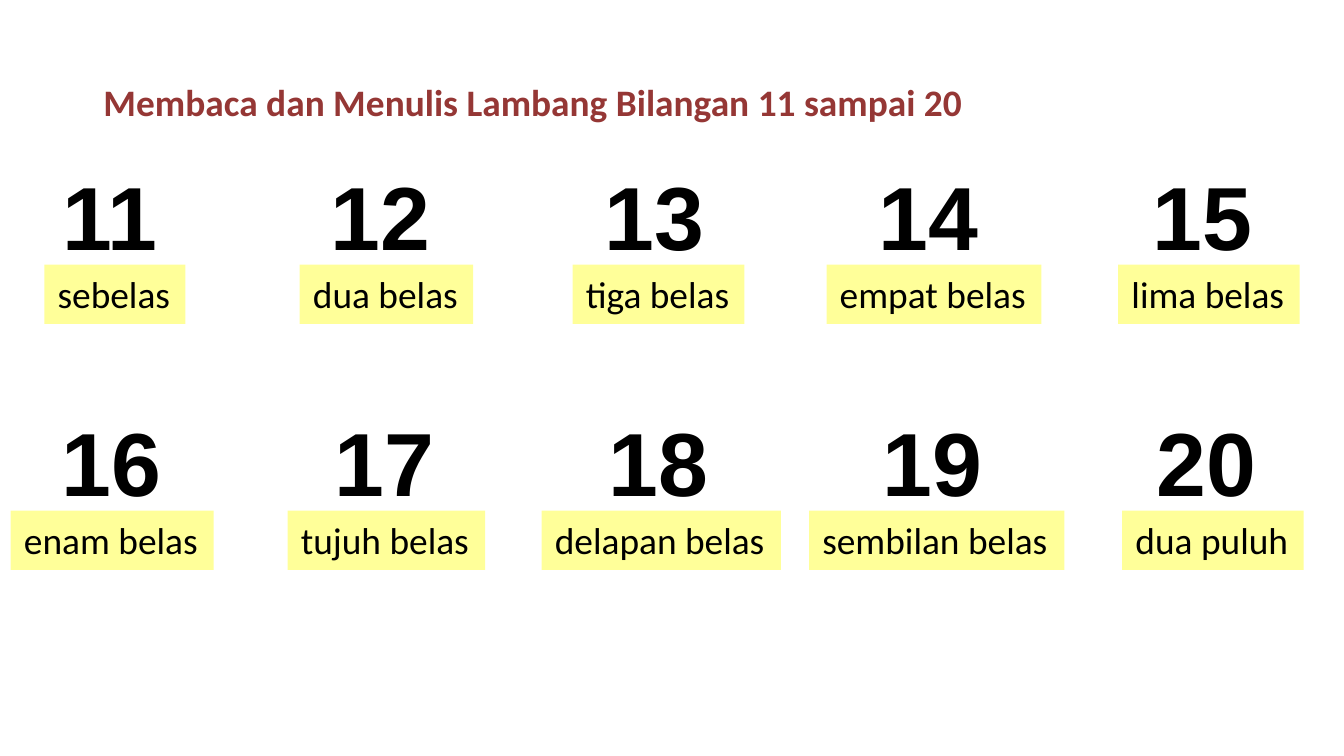
from lxml import etree
from pptx import Presentation
from pptx.dml.color import RGBColor
from pptx.enum.shapes import MSO_SHAPE
from pptx.enum.text import MSO_ANCHOR, MSO_AUTO_SIZE, PP_ALIGN
from pptx.oxml.ns import qn
from pptx.util import Inches, Pt

RECTANGLE = MSO_SHAPE.RECTANGLE
TOP = MSO_ANCHOR.TOP
GROW = MSO_AUTO_SIZE.SHAPE_TO_FIT_TEXT
LEFT = PP_ALIGN.LEFT

TITLE = "Membaca dan Menulis Lambang Bilangan 11 sampai 20"

# Each word: text, left, width
ROWS = [
    {
        "left": 0.37, "top": 1.15, "first_tab": 1.99,
        "numbers": ["11", "12", "13", "14", "15"],
        "words": [("sebelas", 0.33, 1.05), ("dua belas", 2.23, 1.29),
                  ("tiga belas", 4.26, 1.28), ("empat belas", 6.15, 1.6),
                  ("lima belas", 8.32, 1.35)],
    },
    {
        "left": 0.36, "top": 2.98, "first_tab": 2.03,
        "numbers": ["16", "17", "18", "19", "20"],
        "words": [("enam belas", 0.08, 1.51), ("tujuh belas", 2.14, 1.47),
                  ("delapan belas", 4.03, 1.78), ("sembilan belas", 6.02, 1.9),
                  ("dua puluh", 8.35, 1.35)],
    },
]
NUMBER_PITCH = 2.04
NUMBER_WIDTH, NUMBER_HEIGHT = 9.33, 0.91
WORD_DROP, WORD_HEIGHT = 0.82, 0.44

TITLE_FONT = {"name": "Calibri", "size": Pt(20), "bold": True}
NUMBER_FONT = {"name": "Arial", "size": Pt(48), "bold": True}
WORD_FONT = {"name": "Calibri", "size": Pt(20), "bold": False}


def color(value):
    return RGBColor.from_string(value)


def write(box, text, font, ink="000000", wrap=False):
    frame = box.text_frame
    for name, value in {"word_wrap": wrap, "auto_size": GROW,
                        "vertical_anchor": TOP}.items():
        setattr(frame, name, value)
    para = frame.paragraphs[0]
    para.alignment = LEFT
    span = para.add_run()
    span.text = text
    for name, value in font.items():
        setattr(span.font, name, value)
    span.font.color.rgb = color(ink)
    return para


def add_tabs(para, positions):
    tabs = etree.SubElement(para._p.get_or_add_pPr(), qn("a:tabLst"))
    for position in positions:
        etree.SubElement(tabs, qn("a:tab"), pos=str(Inches(position)), algn="l")


def add_row(page, row):
    group = page.shapes.add_group_shape()
    numbers = group.shapes.add_textbox(
        Inches(row["left"]), Inches(row["top"]),
        Inches(NUMBER_WIDTH), Inches(NUMBER_HEIGHT))
    para = write(numbers, "\t".join(row["numbers"]), NUMBER_FONT, wrap=True)
    add_tabs(para, [row["first_tab"] + NUMBER_PITCH * step
                    for step in range(len(row["numbers"]) - 1)])

    for word, left, width in row["words"]:
        label = group.shapes.add_shape(
            RECTANGLE, Inches(left), Inches(row["top"] + WORD_DROP),
            Inches(width), Inches(WORD_HEIGHT))
        label.shadow.inherit = False
        label.fill.solid()
        label.fill.fore_color.rgb = color("FFFF99")
        label.line.fill.background()
        write(label, word, WORD_FONT)


deck = Presentation()
deck.slide_width = Inches(10)
deck.slide_height = Inches(10 * 9 / 16)
page = deck.slides.add_slide(deck.slide_layouts[5])

title = page.shapes.title
title.left, title.top = Inches(0.67), Inches(0.54)
title.width, title.height = Inches(6.65), Inches(0.44)
write(title, TITLE, TITLE_FONT, "953735")

for row in ROWS:
    add_row(page, row)

deck.save("out.pptx")
